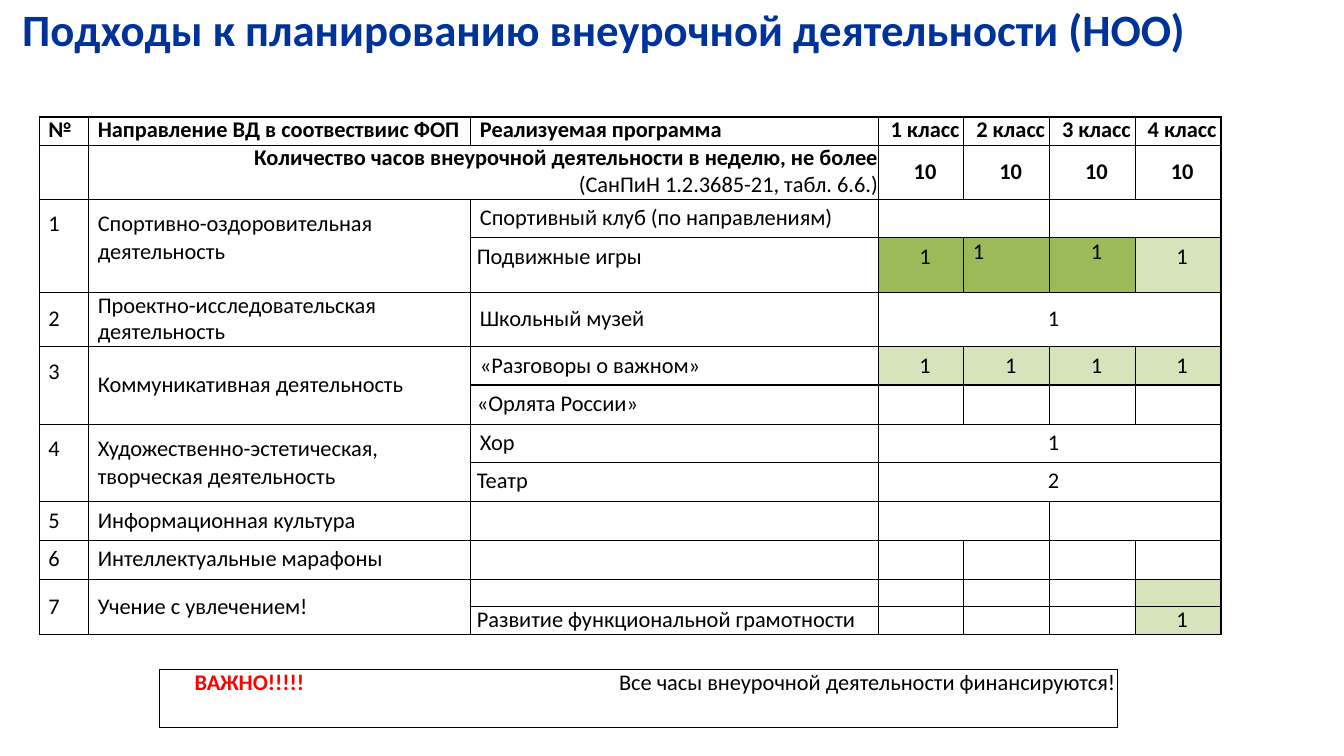
from dataclasses import dataclass

from lxml import etree
from pptx import Presentation
from pptx.dml.color import RGBColor
from pptx.enum import text
from pptx.oxml import ns
from pptx.util import Inches, Pt

LEFT, CENTER, RIGHT = text.PP_ALIGN.LEFT, text.PP_ALIGN.CENTER, text.PP_ALIGN.RIGHT


@dataclass(frozen=True)
class Theme:
    font: str = "Calibri"
    title_size: int = 32
    body_size: int = 16
    title: str = "003399"
    ink: str = "000000"
    alert: str = "FF0000"
    paper: str = "FFFFFF"
    green: str = "9BBB59"
    pale: str = "D7E3BB"


T = Theme()
TIGHT = 18.9  # exact line spacing in points

COLUMNS = [0.49, 3.79, 4.04] + [0.85] * 4
ROWS = [0.28, 0.54, 0.38, 0.54, 0.54, 0.38, 0.39, 0.38, 0.39, 0.38, 0.39, 0.27, 0.27]
HEADERS = ["№", "Направление ВД в соотвествиис ФОП", "Реализуемая программа"]

# first row, last row, number's top inset, name's top inset, name
DIRECTIONS = [
    (2, 3, 0.11, 0.11, "Спортивно-оздоровительная деятельность"),
    (4, 4, 0.13, 0, "Проектно-исследовательская деятельность"),
    (5, 6, 0.11, 0.24, "Коммуникативная деятельность"),
    (7, 8, 0.11, 0.11, "Художественно-эстетическая, творческая деятельность"),
    (9, 9, 0.05, 0.05, "Информационная культура"),
    (10, 10, 0.05, 0.05, "Интеллектуальные марафоны"),
    (11, 12, 0.14, 0.14, "Учение с увлечением!"),
]

# row, top inset, left inset, name
PROGRAMMES = [
    (2, 0.05, 0.09, "Спортивный клуб (по направлениям)"),
    (3, 0.05, 0.06, "Подвижные игры"),
    (4, 0.13, 0.09, "Школьный музей"),
    (5, 0.05, 0.09, "«Разговоры о важном»"),
    (6, 0.05, 0.06, "«Орлята России»"),
    (7, 0.05, 0.09, "Хор"),
    (8, 0.05, 0.06, "Театр"),
    (12, 0, 0.06, "Развитие функциональной грамотности"),
]

# row, column, top inset, hours, fill
HOURS = [
    (3, 3, 0.05, "1", T.green),
    (3, 5, 0, "1", T.green),
    (3, 6, 0.05, "1", T.pale),
    (4, 3, 0.13, "1", T.paper),
    *[(5, col, 0.05, "1", T.pale) for col in range(3, 7)],
    (7, 3, 0.05, "1", T.paper),
    (8, 3, 0.05, "2", T.paper),
    (11, 6, 0, "", T.pale),
    (12, 6, 0, "1", T.pale),
]

# row, first column, last column
JOINED_CLASSES = [(2, 3, 4), (2, 5, 6), (4, 3, 6), (7, 3, 6), (8, 3, 6), (9, 3, 4), (9, 5, 6)]


def set_font(font, size, color, bold=False):
    font.name, font.size, font.bold = T.font, Pt(size), bold
    font.color.rgb = RGBColor.from_string(color)


def set_borders(cell, width):
    tcPr = cell._tc.get_or_add_tcPr()
    for side in ("a:lnL", "a:lnR", "a:lnT", "a:lnB"):
        ln = etree.SubElement(tcPr, ns.qn(side), w=str(Pt(width)))
        fill = etree.SubElement(ln, ns.qn("a:solidFill"))
        etree.SubElement(fill, ns.qn("a:srgbClr"), val=T.ink)


def set_fill(cell, color):
    cell.fill.solid()
    cell.fill.fore_color.rgb = RGBColor.from_string(color)


def add_grid(slide, left, top, columns, rows, border):
    frame = slide.shapes.add_table(len(rows), len(columns), Inches(left), Inches(top),
                                   Inches(sum(columns)), Inches(sum(rows)))
    table = frame.table
    table.first_row = table.horz_banding = False
    for column, width in zip(table.columns, columns):
        column.width = Inches(width)
    for row, height in zip(table.rows, rows):
        row.height = Inches(height)
    for cell in table.iter_cells():
        cell.margin_left = cell.margin_right = cell.margin_top = cell.margin_bottom = 0
        set_borders(cell, border)
        set_fill(cell, T.paper)
        set_font(cell.text_frame.paragraphs[0].font, T.body_size, T.ink)
    return table


def write(cell, words, top=0, left=0.09, align=LEFT, bold=False, spacing=None):
    cell.margin_top, cell.margin_left = Inches(top), Inches(left)
    p = cell.text_frame.paragraphs[0]
    p.text, p.alignment = words, align
    set_font(p.font, T.body_size, T.ink, bold)
    if spacing:
        p.line_spacing = Pt(spacing)


def add_title(slide, words):
    sp = slide.shapes.title
    sp.left, sp.top, sp.width, sp.height = map(Inches, (0.22, 0.01, 12.89, 0.56))
    tf = sp.text_frame
    tf.margin_left = tf.margin_right = tf.margin_bottom = 0
    tf.margin_top = Inches(0.01)
    tf.vertical_anchor = text.MSO_ANCHOR.TOP
    tf.auto_size = text.MSO_AUTO_SIZE.NONE
    p = tf.paragraphs[0]
    p.text, p.alignment, p.line_spacing = words, LEFT, 1.0
    p.space_before = Pt(1)
    set_font(p.font, T.title_size, T.title, True)


def add_plan(slide):
    table = add_grid(slide, 0.39, 1.16, COLUMNS, ROWS, 1)

    # Header and weekly limit
    for col, words in enumerate(HEADERS):
        write(table.cell(0, col), words, bold=True, spacing=TIGHT)
    for col in range(3, 7):
        write(table.cell(0, col), f"{col - 2} класс", 0, 0.08, CENTER, True, TIGHT)
        write(table.cell(1, col), "10", 0.13, 0.08, CENTER, True)
    limit = table.cell(1, 1)
    limit.merge(table.cell(1, 2))
    write(limit, "Количество часов внеурочной деятельности в неделю, не более",
          0, 0, RIGHT, True, TIGHT)
    p = limit.text_frame.add_paragraph()
    p.text, p.alignment, p.line_spacing = "(СанПиН 1.2.3685-21, табл. 6.6.)", RIGHT, Pt(19.1)
    set_font(p.font, T.body_size, T.ink)

    # Directions and programmes
    for number, (first, last, number_top, name_top, name) in enumerate(DIRECTIONS, 1):
        for col, top, words in ((0, number_top, str(number)), (1, name_top, name)):
            if last > first:
                table.cell(first, col).merge(table.cell(last, col))
            write(table.cell(first, col), words, top, spacing=None if top else 19.2)
    for row, top, left, name in PROGRAMMES:
        write(table.cell(row, 2), name, top, left, spacing=None if top else TIGHT)

    # Hours by class
    for row, first, last in JOINED_CLASSES:
        table.cell(row, first).merge(table.cell(row, last))
    for row, col, top, hours, fill in HOURS:
        write(table.cell(row, col), hours, top, 0.08, CENTER, spacing=TIGHT if row > 10 else None)
        set_fill(table.cell(row, col), fill)
    write(table.cell(3, 4), "1")
    set_fill(table.cell(3, 4), T.green)


def add_note(slide):
    cell = add_grid(slide, 1.58, 6.64, [9.5], [0.58], 0.5).cell(0, 0)
    p = cell.text_frame.paragraphs[0]
    tabs = etree.SubElement(p._p.get_or_add_pPr(), ns.qn("a:tabLst"))
    p._p.pPr.insert(0, tabs)
    for stop in (0.35, 4.56):
        etree.SubElement(tabs, ns.qn("a:tab"), pos=str(Inches(stop)), algn="l")
    for words, color, bold in (("\tВАЖНО!!!!!", T.alert, True),
                               ("\tВсе часы внеурочной деятельности финансируются!", T.ink, False)):
        r = p.add_run()
        r.text = words
        set_font(r.font, T.body_size, color, bold)


def main():
    prs = Presentation()
    prs.slide_width, prs.slide_height = Inches(13.33), Inches(7.5)
    slide = prs.slides.add_slide(prs.slide_layouts[5])
    add_title(slide, "Подходы к планированию внеурочной деятельности (НОО)")
    add_plan(slide)
    add_note(slide)
    prs.save("out.pptx")


if __name__ == "__main__":
    main()
